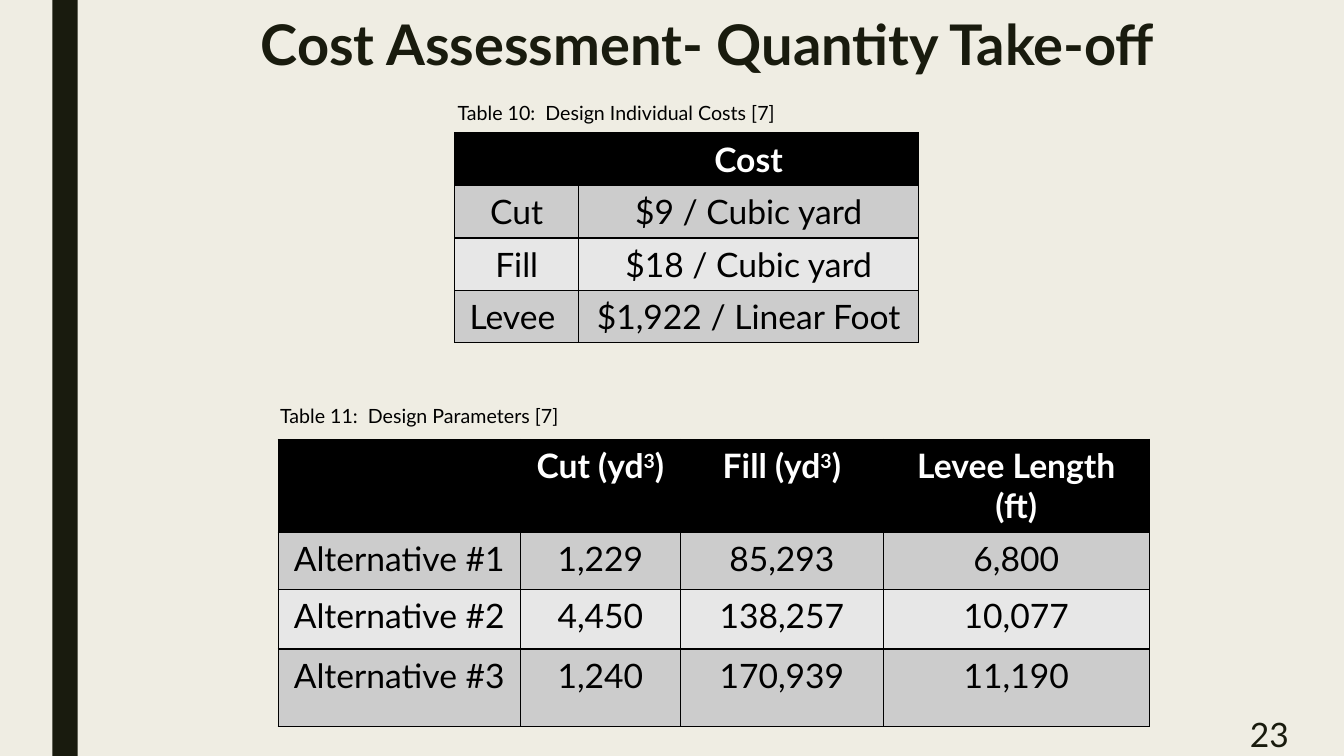
from pptx import Presentation
from pptx.dml.color import RGBColor
from pptx.enum import shapes, text
from pptx.oxml import parse_xml
from pptx.oxml.ns import nsdecls
from pptx.util import Inches, Pt

CREAM = RGBColor(0xEF, 0xED, 0xE3)
DARK = RGBColor(0x19, 0x1B, 0x0E)
BLACK = RGBColor(0, 0, 0)
WHITE = RGBColor(0xFF, 0xFF, 0xFF)
BANDS = [RGBColor(0xCC, 0xCC, 0xCC), RGBColor(0xE7, 0xE7, 0xE7)]
ALIGN = text.PP_ALIGN


def add_run(p, content, size, color, bold=False):
    r = p.add_run()
    r.text = content
    fmt = {"name": "Lato", "size": Pt(size), "bold": bold}
    for key, value in fmt.items():
        setattr(r.font, key, value)
    r.font.color.rgb = color
    return r


def set_borders(cell):
    for side in ("lnL", "lnR", "lnT", "lnB"):
        # Borders come before the fill in the cell properties
        pos = ("lnL", "lnR", "lnT", "lnB").index(side)
        cell._tc.get_or_add_tcPr().insert(pos, parse_xml(
            f'<a:{side} {nsdecls("a")} w="12700"><a:solidFill>'
            f'<a:srgbClr val="{BLACK}"/></a:solidFill></a:{side}>'))


prs = Presentation()
prs.slide_width, prs.slide_height = Inches(13.33), Inches(7.5)
s = prs.slides.add_slide(prs.slide_layouts[6])
s.background.fill.solid()
s.background.fill.fore_color.rgb = CREAM

# Side bar
bar = s.shapes.add_shape(shapes.MSO_SHAPE.RECTANGLE, Inches(0.52), 0,
                         Inches(0.25), Inches(7.5))
bar.shadow.inherit = False
bar.fill.solid()
bar.fill.fore_color.rgb = DARK
bar.line.fill.background()

# Title, page number and table captions
labels = [
    ("Cost Assessment- Quantity Take-off ", (1.83, 0.13, 10.5, 0.83), 40, DARK,
     True, {"alignment": ALIGN.CENTER, "line_spacing": 0.89}, text.MSO_ANCHOR.TOP),
    ("23", (11.13, 7.06, 1.75, 0.44), 24, DARK,
     False, {"alignment": ALIGN.RIGHT}, text.MSO_ANCHOR.MIDDLE),
    ("Table 10:  Design Individual Costs [7]", (4.44, 0.95, 4.76, 0.34), 14, BLACK,
     False, {}, text.MSO_ANCHOR.TOP),
    ("Table 11:  Design Parameters [7]", (2.68, 3.96, 4.76, 0.34), 14, BLACK,
     False, {}, text.MSO_ANCHOR.TOP),
]
for content, box, size, color, bold, fmt, anchor in labels:
    tf = s.shapes.add_textbox(*map(Inches, box)).text_frame
    tf.word_wrap = True
    tf.vertical_anchor = anchor
    p = tf.paragraphs[0]
    for key, value in fmt.items():
        setattr(p, key, value)
    add_run(p, content, size, color, bold)

# Tables: position, column widths, row heights, rows ("^" toggles superscript)
tables = [
    ((4.51, 1.32), [1.23, 3.37], [0.48] * 4, [
        ["", "Cost"],
        ["Cut", "$9 / Cubic yard"],
        ["Fill", "$18 / Cubic yard"],
        ["Levee ", "$1,922 / Linear Foot"]]),
    ((2.76, 4.36), [2.4, 1.59, 2.01, 2.64], [0.49, 0.57, 0.59, 0.77], [
        ["", "Cut (yd^3^)", "Fill (yd^3^)", "Levee Length (ft)"],
        ["Alternative #1", "1,229", "85,293", "6,800"],
        ["Alternative #2", "4,450", "138,257", "10,077"],
        ["Alternative #3", "1,240", "170,939", "11,190"]]),
]
margins = {"margin_left": 0.12, "margin_right": 0.12,
           "margin_top": 0.06, "margin_bottom": 0.06}
for (left, top), widths, heights, rows in tables:
    table = s.shapes.add_table(len(rows), len(widths), Inches(left), Inches(top),
                               Inches(sum(widths)), Inches(sum(heights))).table
    for column, width in zip(table.columns, widths):
        column.width = Inches(width)
    for i, values in enumerate(rows):
        table.rows[i].height = Inches(heights[i])
        for j, value in enumerate(values):
            cell = table.cell(i, j)
            for key, margin in margins.items():
                setattr(cell, key, Inches(margin))
            cell.fill.solid()
            cell.fill.fore_color.rgb = BANDS[(i - 1) % 2] if i else BLACK
            set_borders(cell)
            p = cell.text_frame.paragraphs[0]
            p.alignment = ALIGN.CENTER
            if not value:
                continue
            for k, part in enumerate(value.split("^")):
                r = add_run(p, part, 24, BLACK if i else WHITE, i == 0)
                if k % 2:
                    r._r.get_or_add_rPr().set("baseline", "30000")

prs.save("out.pptx")
